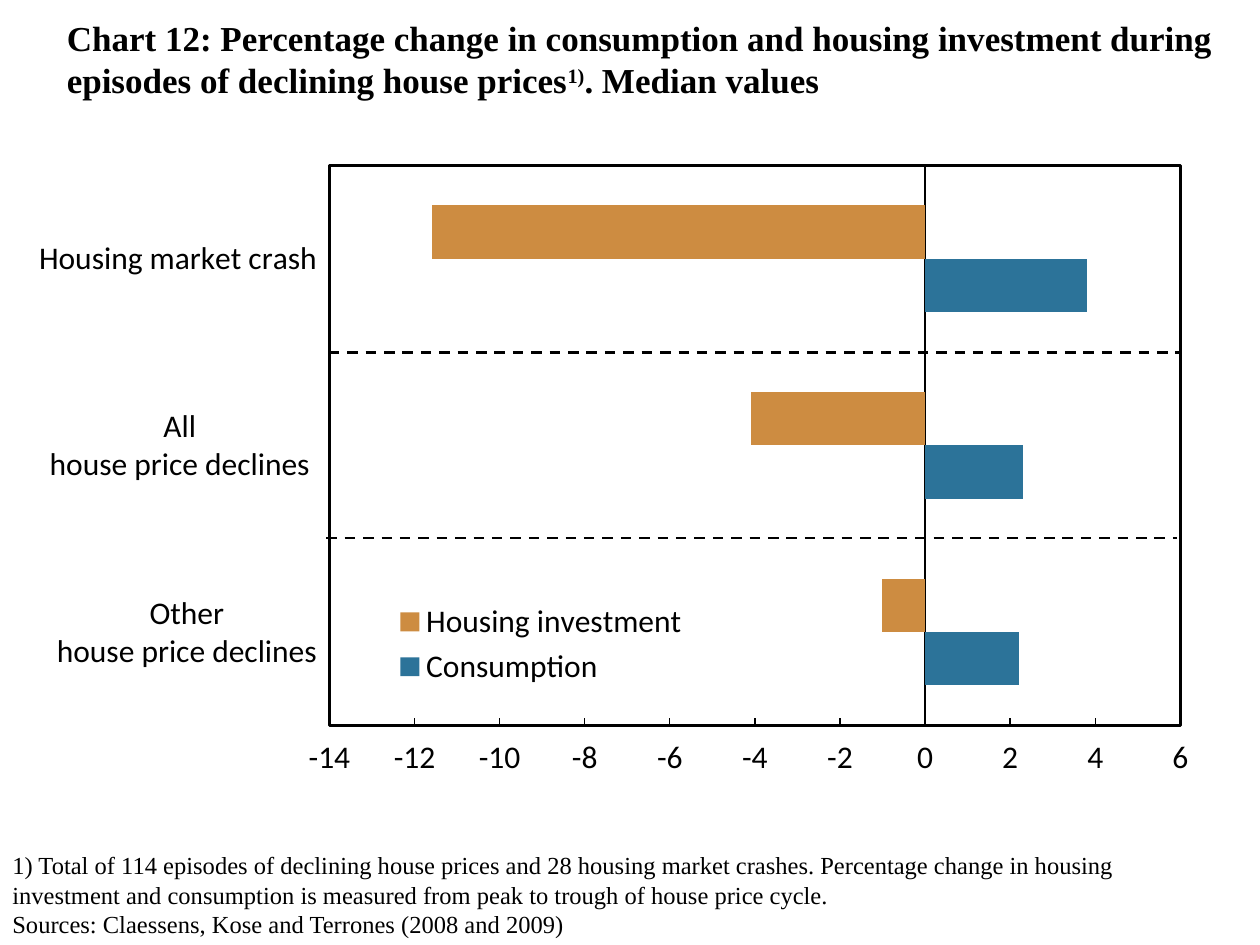
"""Build a slide with a bar chart of consumption and housing investment."""
from lxml import etree
from pptx import Presentation
from pptx.chart.data import CategoryChartData
from pptx.dml.color import RGBColor
from pptx.enum.chart import XL_CHART_TYPE, XL_LEGEND_POSITION, XL_TICK_LABEL_POSITION, XL_TICK_MARK
from pptx.enum.dml import MSO_LINE
from pptx.enum.shapes import MSO_CONNECTOR
from pptx.enum.text import MSO_ANCHOR, PP_ALIGN
from pptx.oxml import parse_xml
from pptx.oxml.ns import nsdecls, qn
from pptx.util import Inches, Pt

BAR_CLUSTERED = XL_CHART_TYPE.BAR_CLUSTERED
LEGEND_RIGHT = XL_LEGEND_POSITION.RIGHT
LABELS_LOW = XL_TICK_LABEL_POSITION.LOW
TICK_NONE, TICK_INSIDE = XL_TICK_MARK.NONE, XL_TICK_MARK.INSIDE
DASH = MSO_LINE.DASH
STRAIGHT = MSO_CONNECTOR.STRAIGHT
MIDDLE, LEFT = MSO_ANCHOR.MIDDLE, PP_ALIGN.LEFT

BLACK = RGBColor(0x00, 0x00, 0x00)
BLUE = RGBColor(0x2C, 0x73, 0x99)
ORANGE = RGBColor(0xCD, 0x8C, 0x41)
SERIF, SANS = "Times New Roman", "Calibri"


def set_font(font, name, size, bold=False):
    font.name, font.size, font.bold = name, Pt(size), bold
    font.color.rgb = BLACK


def make_layout(x, y, w, h, target=""):
    return parse_xml(
        f'<c:layout {nsdecls("c")}><c:manualLayout>{target}'
        '<c:xMode val="edge"/><c:yMode val="edge"/>'
        f'<c:x val="{x}"/><c:y val="{y}"/><c:w val="{w}"/><c:h val="{h}"/>'
        '</c:manualLayout></c:layout>')


prs = Presentation()
prs.slide_width, prs.slide_height = Inches(10), Inches(7.5)
slide = prs.slides.add_slide(prs.slide_layouts[5])

title = slide.shapes.title
title.left, title.top, title.width, title.height = Inches(0.43), Inches(0), Inches(9.37), Inches(1.25)
heading = title.text_frame
heading.vertical_anchor = MIDDLE
heading.margin_bottom = Inches(0.37)
heading_line = heading.paragraphs[0]
heading_line.alignment = LEFT
set_font(heading_line.font, SERIF, 20, True)
heading_line.add_run().text = (
    "Chart 12: Percentage change in consumption and housing investment "
    "during episodes of declining house prices")
footnote_mark = heading_line.add_run()
footnote_mark.text = "1)"
footnote_mark._r.get_or_add_rPr().set("baseline", "30000")
heading_line.add_run().text = ". Median values"

changes = CategoryChartData()
changes.categories = ["Other\nhouse price declines", "All \nhouse price declines ", "Housing market crash"]
changes.add_series("Consumption", (2.2, 2.3, 3.8))
changes.add_series("Housing investment", (-1, -4.1, -11.6))
chart = slide.shapes.add_chart(
    BAR_CLUSTERED, Inches(0.12), Inches(1.23), Inches(9.38), Inches(5.47), changes).chart
chart.has_title = False
set_font(chart.font, SANS, 18)

bars = chart.plots[0]
bars.gap_width, bars.overlap = 150, 0
bars.vary_by_categories = False
for series, color in zip(bars.series, (BLUE, ORANGE)):
    series.invert_if_negative = False
    series.format.fill.solid()
    series.format.fill.fore_color.rgb = color

episodes, percent = chart.category_axis, chart.value_axis
for axis, tick in ((episodes, TICK_NONE), (percent, TICK_INSIDE)):
    axis.has_major_gridlines = False
    axis.major_tick_mark, axis.minor_tick_mark = tick, TICK_NONE
    axis.tick_label_position = LABELS_LOW
    axis.format.line.color.rgb = BLACK
    axis.format.line.width = Pt(0.75)
    set_font(axis.tick_labels.font, SANS, 18)
percent.minimum_scale, percent.maximum_scale, percent.major_unit = -14, 6, 2

plot_area = chart._chartSpace.chart.plotArea
for old_layout in plot_area.findall(qn("c:layout")):
    plot_area.remove(old_layout)
plot_area.insert(0, make_layout(0.27, 0.01, 0.72, 0.81, '<c:layoutTarget val="inner"/>'))
for name, value in (("x", "0.266"), ("y", "0.015"), ("h", "0.813")):
    plot_area.find(".//" + qn(f"c:{name}")).set("val", value)
plot_area.append(parse_xml(
    f'<c:spPr {nsdecls("c", "a")}><a:noFill/><a:ln w="{Pt(1.5)}">'
    f'<a:solidFill><a:srgbClr val="{BLACK}"/></a:solidFill></a:ln></c:spPr>'))

chart.has_legend = True
legend = chart.legend
legend.position = LEGEND_RIGHT
legend.include_in_layout = True
set_font(legend.font, SANS, 18)
legend_xml = legend._element
for old_layout in legend_xml.findall(qn("c:layout")):
    legend_xml.remove(old_layout)
legend_xml.find(qn("c:legendPos")).addnext(make_layout(0.31, 0.64, 0.27, 0.14))

notes = slide.shapes.add_textbox(Inches(0), Inches(6.7), Inches(9.56), Inches(0.81)).text_frame
notes.word_wrap = True
notes.text = (
    "1) Total of 114 episodes of declining house prices and 28 housing market crashes. "
    "Percentage change in housing investment and consumption is measured from peak to "
    "trough of house price cycle.\n"
    "Sources: Claessens, Kose and Terrones (2008 and 2009)")
for paragraph in notes.paragraphs:
    set_font(paragraph.font, SERIF, 14)

for left, top in ((2.59, 4.27), (2.61, 2.8)):
    divider = slide.shapes.add_connector(
        STRAIGHT, Inches(left), Inches(top), Inches(left + 6.75), Inches(top))
    divider.line.color.rgb = BLACK
    divider.line.width = Pt(1.5)
    divider.line.dash_style = DASH
    etree.SubElement(divider._element.spPr, qn("a:effectLst"))

prs.save("out.pptx")
